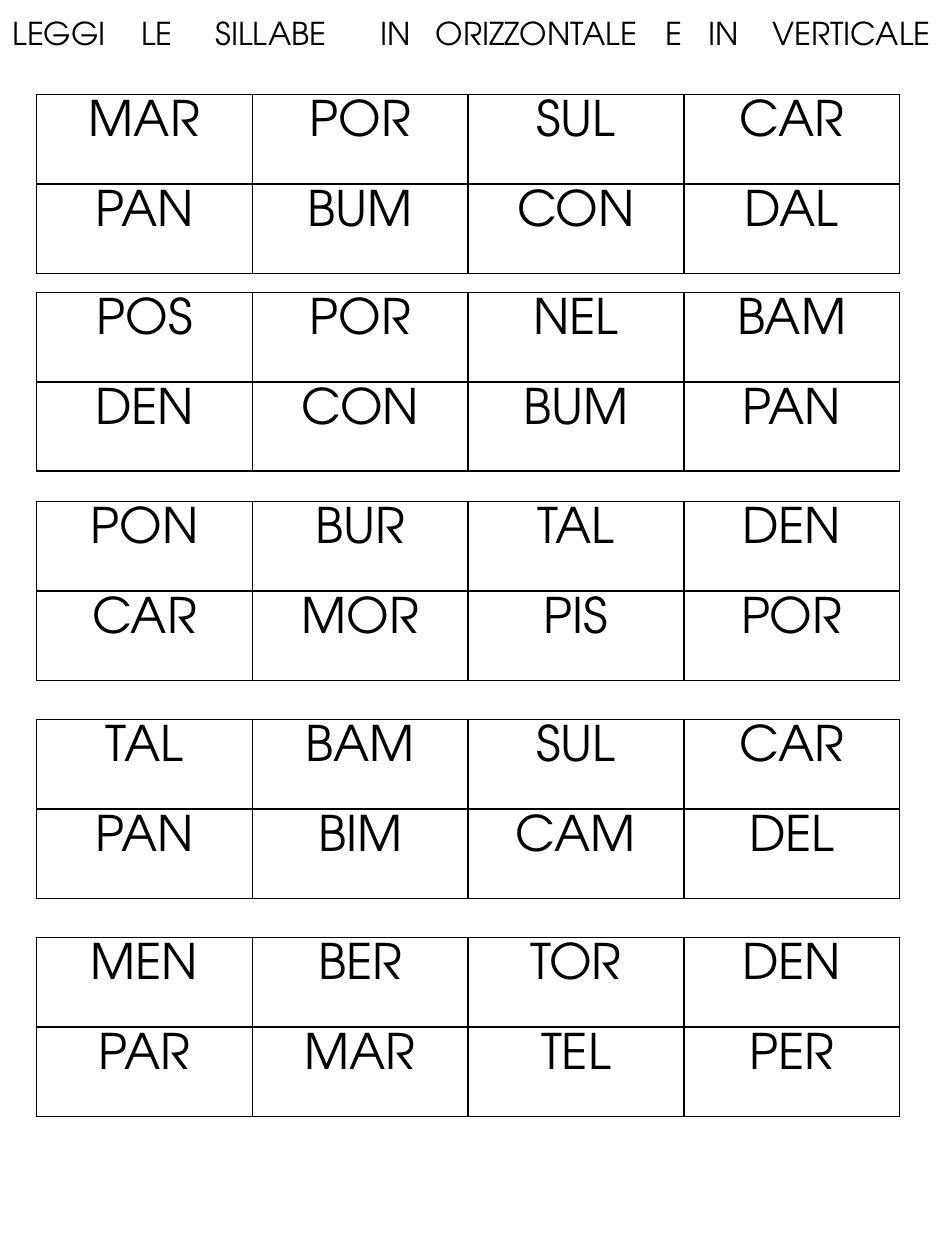
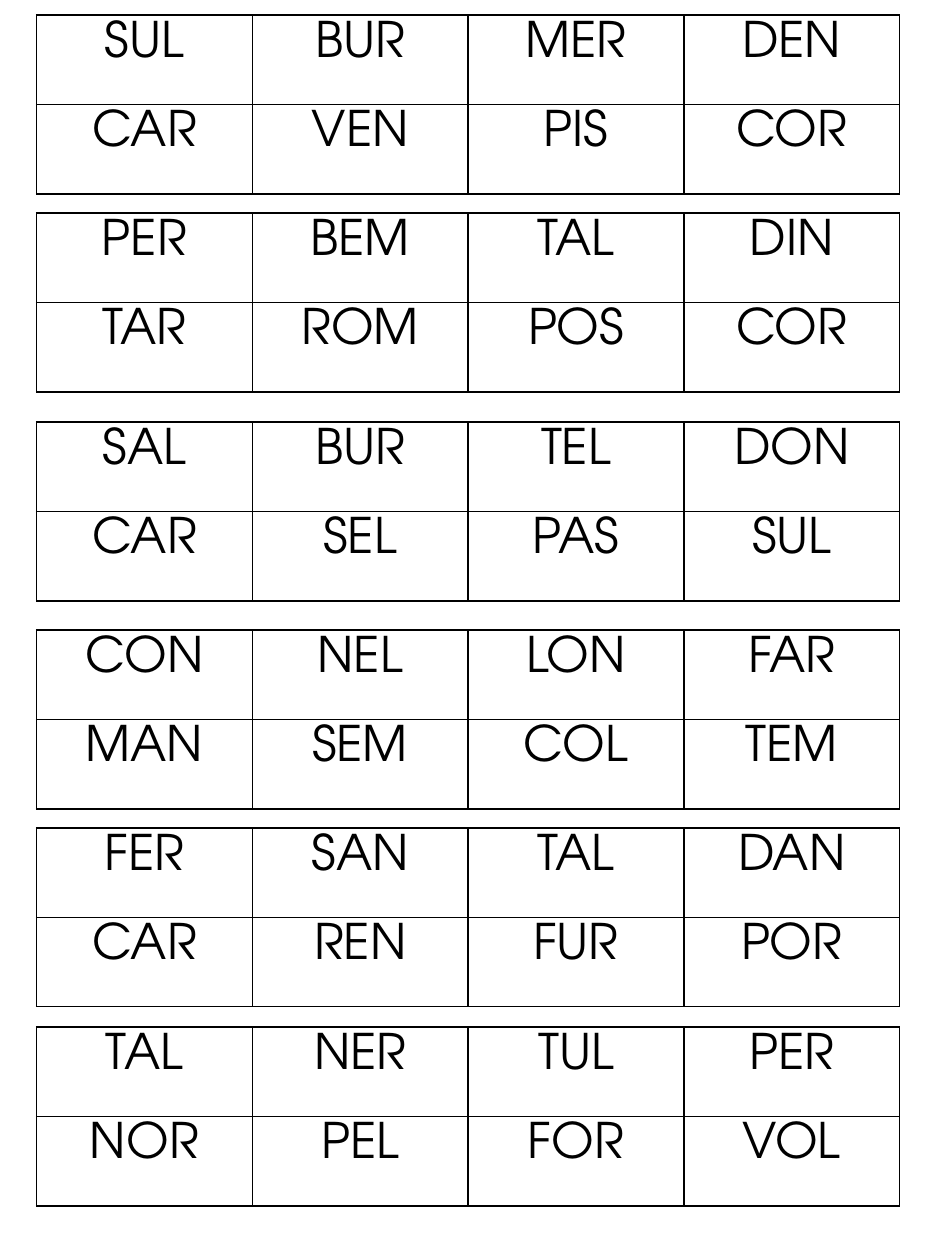
from lxml.etree import SubElement
from pptx import Presentation
from pptx.dml.color import RGBColor
from pptx.enum.text import MSO_ANCHOR, MSO_AUTO_SIZE, PP_ALIGN
from pptx.oxml.ns import qn
from pptx.util import Inches, Pt

INK = RGBColor(0, 0, 0)
FONT = "TeX Gyre Adventor"
LEFT, WIDE, HIGH = 0.29, 6.85, 1.42

TITLE = [("LEGGI", 0), ("LE", 1.02), ("SILLABE", 1.61), ("IN", 2.92),
         ("ORIZZONTALE", 3.36), ("E", 5.18), ("IN", 5.52), ("VERTICALE", 6.03)]

FIRST = [
    (0.75, "MAR POR SUL CAR", "PAN BUM CON DAL"),
    (2.32, "POS POR NEL BAM", "DEN CON BUM PAN"),
    (3.98, "PON BUR TAL DEN", "CAR MOR PIS POR"),
    (5.71, "TAL BAM SUL CAR", "PAN BIM CAM DEL"),
    (7.44, "MEN BER TOR DEN", "PAR MAR TEL PER"),
]
SECOND = [
    (0.12, "SUL BUR MER DEN", "CAR VEN PIS COR"),
    (1.69, "PER BEM TAL DIN", "TAR ROM POS COR"),
    (3.35, "SAL BUR TEL DON", "CAR SEL PAS SUL"),
    (5, "CON NEL LON FAR", "MAN SEM COL TEM"),
    (6.57, "FER SAN TAL DAN", "CAR REN FUR POR"),
    (8.15, "TAL NER TUL PER", "NOR PEL FOR VOL"),
]


def add_run(para, text, size):
    run = para.add_run()
    run.text = text
    run.font.name = FONT
    run.font.size = Pt(size)
    run.font.color.rgb = INK


def add_title(slide, left, top, width, height):
    title = slide.shapes.title
    title.left, title.top = Inches(left), Inches(top)
    title.width, title.height = Inches(width), Inches(height)
    frame = title.text_frame
    frame.word_wrap = True
    frame.auto_size = MSO_AUTO_SIZE.NONE
    frame.vertical_anchor = MSO_ANCHOR.TOP
    para = frame.paragraphs[0]
    para.alignment = PP_ALIGN.LEFT
    tabs = SubElement(para._p.get_or_add_pPr(), qn("a:tabLst"))
    for word, stop in TITLE:
        if stop:
            SubElement(tabs, qn("a:tab"), pos=str(Inches(stop)), algn="l")
            word = "\t" + word
        add_run(para, word, 18)


def add_border(cell):
    props = cell._tc.get_or_add_tcPr()
    for side in ("lnL", "lnR", "lnT", "lnB"):
        line = SubElement(props, qn("a:" + side), w=str(Pt(1)))
        fill = SubElement(line, qn("a:solidFill"))
        SubElement(fill, qn("a:srgbClr"), val=str(INK))


def add_grid(slide, left, top, width, height, rows):
    table = slide.shapes.add_table(
        len(rows), len(rows[0]), Inches(left), Inches(top),
        Inches(width), Inches(height)).table
    table.first_row = table.horz_banding = False
    for r, row in enumerate(rows):
        for c, word in enumerate(row):
            cell = table.cell(r, c)
            add_border(cell)
            cell.fill.background()
            para = cell.text_frame.paragraphs[0]
            para.alignment = PP_ALIGN.CENTER
            add_run(para, word, 28)


def add_page(deck, layout, grids):
    slide = deck.slides.add_slide(deck.slide_layouts[layout])
    for top, *lines in grids:
        add_grid(slide, LEFT, top, WIDE, HIGH, [line.split() for line in lines])
    return slide


def main():
    deck = Presentation()
    deck.slide_width, deck.slide_height = Inches(7.5), Inches(10)
    add_title(add_page(deck, 5, FIRST), 0, 0.06, 7.58, 0.4)
    add_page(deck, 6, SECOND)
    deck.save("out.pptx")


if __name__ == "__main__":
    main()
